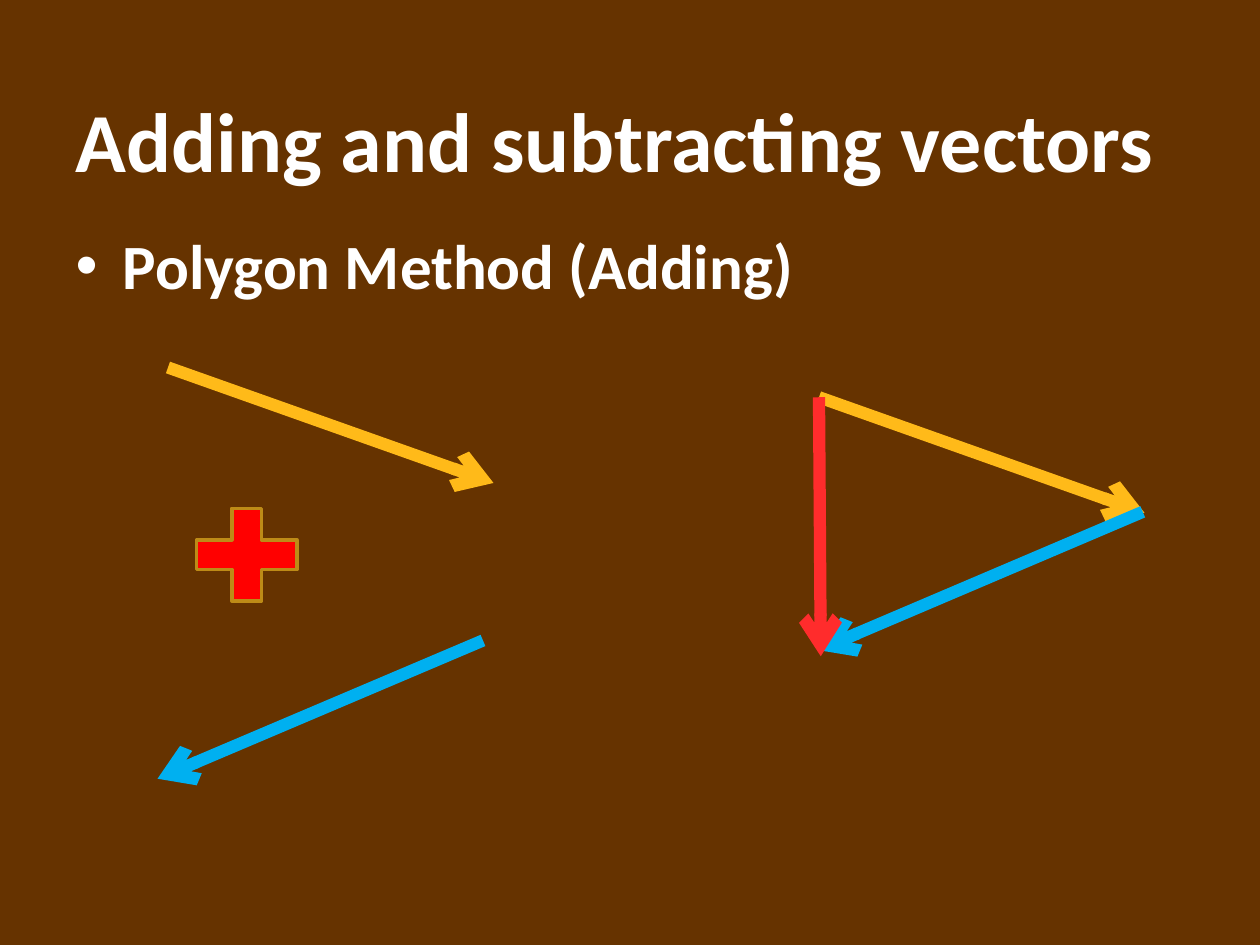
from lxml.etree import SubElement
from pptx import Presentation
from pptx.dml.color import RGBColor
from pptx.enum.shapes import MSO_CONNECTOR, MSO_SHAPE
from pptx.enum.text import MSO_ANCHOR, MSO_AUTO_SIZE, PP_ALIGN
from pptx.oxml.ns import qn
from pptx.util import Pt

COLORS = {
    "background": "663300",
    "text": "FFFFFF",
    "first": "FFBA19",
    "second": "00B0F0",
    "sum": "FF2C2C",
    "plus": "FF0000",
    "plus_line": "BD8B17",
}


def rgb(name):
    return RGBColor.from_string(COLORS[name])


prs = Presentation()
prs.slide_width, prs.slide_height = Pt(720), Pt(540)
s = prs.slides.add_slide(prs.slide_layouts[1])
s.background.fill.solid()
s.background.fill.fore_color.rgb = rgb("background")

title, body = s.placeholders
texts = [
    (title, "Adding and subtracting vectors", 48, MSO_ANCHOR.BOTTOM, (36, 21.6, 648, 90)),
    (body, "Polygon Method (Adding)", 36, MSO_ANCHOR.TOP, (36, 126, 444, 54)),
]
for sp, text, size, anchor, box in texts:
    sp.left, sp.top, sp.width, sp.height = [Pt(v) for v in box]
    tf = sp.text_frame
    tf.text = text
    tf.auto_size = MSO_AUTO_SIZE.NONE
    tf.vertical_anchor = anchor
    p = tf.paragraphs[0]
    p.alignment = PP_ALIGN.LEFT
    p.space_before = Pt(0)
    p.font.name = "Calibri"
    p.font.size = Pt(size)
    p.font.bold = True
    p.font.color.rgb = rgb("text")

plus = s.shapes.add_shape(MSO_SHAPE.MATH_PLUS, Pt(102), Pt(281), Pt(78), Pt(72))
plus.shadow.inherit = False
plus.fill.solid()
plus.fill.fore_color.rgb = rgb("plus")
plus.line.color.rgb = rgb("plus_line")
plus.line.width = Pt(2)

vectors = [
    ("first", 96, 210, 282, 276),
    ("second", 276, 366, 90, 445),
    ("first", 468, 227, 654, 293),
    ("second", 653, 292.5, 467.5, 371.5),
    ("sum", 468, 227, 469, 375),
]
for color, *ends in vectors:
    arrow = s.shapes.add_connector(MSO_CONNECTOR.STRAIGHT, *[Pt(v) for v in ends])
    arrow.line.color.rgb = rgb(color)
    arrow.line.width = Pt(7)
    SubElement(arrow.line._get_or_add_ln(), qn("a:tailEnd"), type="arrow")
    SubElement(arrow._element.spPr, qn("a:effectLst"))

prs.save("out.pptx")
